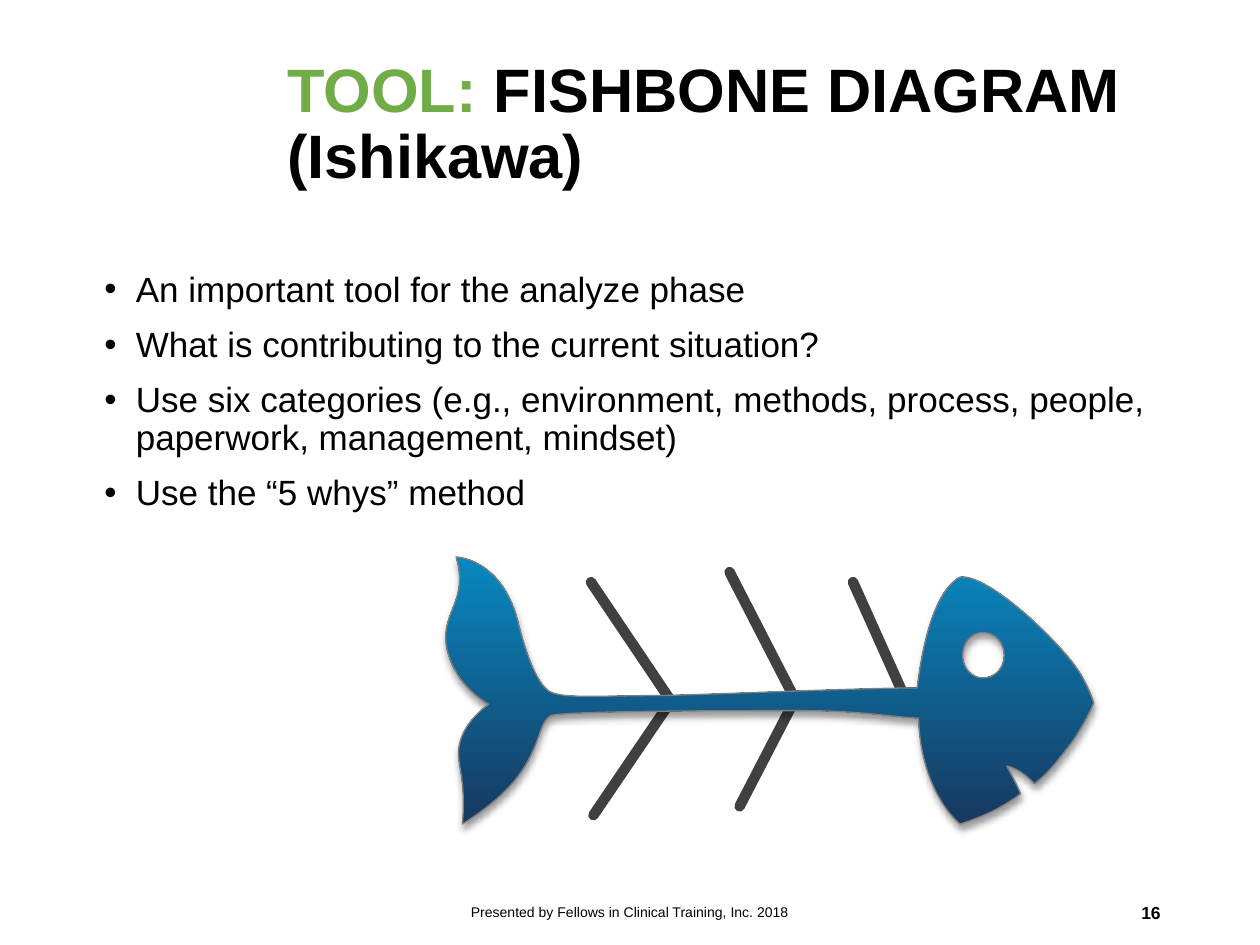
"""Build the fishbone diagram slide."""
import lxml.etree
import pptx
import pptx.dml.color
import pptx.enum.shapes
import pptx.enum.text
import pptx.oxml.ns
import pptx.util

Inches = pptx.util.Inches
Pt = pptx.util.Pt
qn = pptx.oxml.ns.qn
Align = pptx.enum.text.PP_ALIGN
Anchor = pptx.enum.text.MSO_ANCHOR

COLORS = {
    "text": "000000",
    "accent": "70AD47",
    "bone": "404040",
    "outline": "808080",
    "fish_bottom": "17385F",
    "fish_top": "0888C0",
}

POINTS = [
    "An important tool for the analyze phase",
    "What is contributing to the current situation?",
    "Use six categories (e.g., environment, methods, process, people, "
    "paperwork, management, mindset)",
    "Use the “5 whys” method",
]

BONES = [
    ((6.77, 4.62), (7.21, 5.6)),
    ((5.79, 4.54), (6.31, 5.55)),
    ((4.69, 4.62), (5.35, 5.6)),
    ((5.87, 6.4), (6.31, 5.55)),
    ((4.71, 6.47), (5.3, 5.6)),
]

EYE = [
    (7.8, 5.02), (7.71, 5.02), (7.64, 5.1), (7.64, 5.2),
    (7.64, 5.3), (7.71, 5.38), (7.8, 5.38),
    (7.9, 5.38), (7.97, 5.3), (7.97, 5.2),
    (7.97, 5.1), (7.9, 5.02), (7.8, 5.02),
]

BODY = [
    (3.62, 4.42), (3.62, 4.42), (4, 4.43), (4.12, 4.97),
    (4.19, 5.24), (4.27, 5.42), (4.35, 5.48),
    (4.44, 5.55), (4.75, 5.52), (5.24, 5.52),
    (5.72, 5.51), (6.82, 5.46), (7.28, 5.46),
    (7.35, 4.87), (7.5, 4.64), (7.62, 4.58),
    (7.83, 4.55), (8.37, 5.05), (8.55, 5.31),
    (8.65, 5.46), (8.68, 5.58), (8.68, 5.58),
    (8.68, 5.58), (8.62, 5.73), (8.5, 5.9),
    (8.42, 6), (8.34, 6.12), (8.21, 6.22),
    (8.09, 6.09), (7.99, 6.08), (7.99, 6.08),
    (7.99, 6.08), (8.08, 6.24), (8.1, 6.3),
    (7.97, 6.4), (7.81, 6.48), (7.62, 6.54),
    (7.62, 6.54), (7.31, 6.3), (7.29, 5.7),
    (7.07, 5.69), (6.84, 5.64), (6.35, 5.64),
    (5.87, 5.64), (4.47, 5.64), (4.37, 5.68),
    (4.28, 5.73), (4.29, 5.9), (4.14, 6.12),
    (3.99, 6.35), (3.67, 6.54), (3.67, 6.54),
    (3.7, 6.19), (3.63, 6.08), (3.64, 5.95),
    (3.66, 5.73), (3.88, 5.59), (3.88, 5.59),
    (3.88, 5.59), (3.59, 5.44), (3.54, 5.11),
    (3.51, 4.85), (3.72, 4.76), (3.62, 4.42),
]


def rgb(name):
    """Return the palette colour with this name."""
    return pptx.dml.color.RGBColor.from_string(COLORS[name])


class FishboneSlide:
    """Hold the style and the current slide."""

    font_name = "Arial"

    def __init__(self, deck):
        """Add a title-only slide to the deck."""
        self.slide = deck.slides.add_slide(deck.slide_layouts[5])

    def style(self, run, size, color="text", bold=False):
        """Format one run."""
        run.font.name = self.font_name
        run.font.size = Pt(size)
        run.font.bold = bold
        run.font.color.rgb = rgb(color)

    def title(self, box, parts):
        """Fill the title with (text, colour) parts."""
        heading = self.slide.shapes.title
        heading.left, heading.top, heading.width, heading.height = map(Inches, box)
        frame = heading.text_frame
        frame.word_wrap = True
        frame.auto_size = pptx.enum.text.MSO_AUTO_SIZE.NONE
        frame.vertical_anchor = Anchor.MIDDLE
        paragraph = frame.paragraphs[0]
        paragraph.alignment = Align.LEFT
        paragraph.line_spacing = 0.9
        for text, color in parts:
            run = paragraph.add_run()
            run.text = text
            self.style(run, 35, color, True)

    def text(self, box, text, size, align=Align.LEFT, anchor=Anchor.MIDDLE, bold=False):
        """Add a text box and return its frame."""
        frame = self.slide.shapes.add_textbox(*map(Inches, box)).text_frame
        frame.word_wrap = True
        frame.vertical_anchor = anchor
        frame.text = text
        for paragraph in frame.paragraphs:
            paragraph.alignment = align
            self.style(paragraph.runs[0], size, bold=bold)
        return frame

    def bullets(self, box, points):
        """Add a bulleted list."""
        frame = self.text(box, "\n".join(points), 20, anchor=Anchor.TOP)
        for index, paragraph in enumerate(frame.paragraphs):
            paragraph.line_spacing = 0.9
            paragraph.space_before = Pt(10 if index else 0)
            props = paragraph._p.get_or_add_pPr()
            props.set("marL", str(Inches(0.25)))
            props.set("indent", str(-Inches(0.25)))
            lxml.etree.SubElement(props, qn("a:buFont"), typeface=self.font_name)
            lxml.etree.SubElement(props, qn("a:buChar"), char="•")

    def bone(self, group, start, end):
        """Add one round-ended bone to the group."""
        bone = group.shapes.add_connector(
            pptx.enum.shapes.MSO_CONNECTOR.STRAIGHT, *map(Inches, start + end)
        )
        bone.line.color.rgb = rgb("bone")
        bone.line.width = Pt(6)
        properties = bone._element.spPr
        properties.find(qn("a:ln")).set("cap", "rnd")
        lxml.etree.SubElement(properties, qn("a:effectLst"))

    def curved(self, group, outlines):
        """Add a freeform whose outlines are chains of cubic curves."""
        chains = [[(Inches(x), Inches(y)) for x, y in chain] for chain in outlines]
        builder = group.shapes.build_freeform(*chains[0][0])
        for index, chain in enumerate(chains):
            if index:
                builder.move_to(*chain[0])
            builder.add_line_segments(chain[3::3], close=True)
        shape = builder.convert_to_shape()
        controls = [chain[i:i + 2] for chain in chains for i in range(1, len(chain), 3)]
        segments = list(shape._element.iter(qn("a:lnTo")))
        for segment, pair in zip(segments, controls):
            curve = lxml.etree.Element(qn("a:cubicBezTo"))
            for x, y in pair:
                lxml.etree.SubElement(
                    curve, qn("a:pt"), x=str(x - shape.left), y=str(y - shape.top)
                )
            curve.append(segment[0])
            segment.getparent().replace(segment, curve)
        return shape

    def fish(self, bones, eye, body):
        """Add the bones and the fish with its eye cut out."""
        group = self.slide.shapes.add_group_shape()
        for start, end in bones:
            self.bone(group, start, end)
        fish = self.curved(group, [eye, body])
        fish.fill.gradient()
        fish.fill.gradient_angle = 90
        for stop, color in zip(fish.fill.gradient_stops, ("fish_bottom", "fish_top")):
            stop.color.rgb = rgb(color)
        fish.line.color.rgb = rgb("outline")
        fish.line.width = Pt(0)
        fish.shadow.inherit = False
        shadow = lxml.etree.SubElement(
            fish._element.spPr.find(qn("a:effectLst")), qn("a:outerShdw"),
            blurRad=str(Pt(4)), dist=str(Pt(3)), dir="5400000", rotWithShape="0",
        )
        shade = lxml.etree.SubElement(shadow, qn("a:srgbClr"), val=COLORS["text"])
        lxml.etree.SubElement(shade, qn("a:alpha"), val="40000")


def main():
    """Build and save the slide."""
    deck = pptx.Presentation()
    deck.slide_width, deck.slide_height = Inches(10), Inches(7.5)
    page = FishboneSlide(deck)
    page.title((2.18, 0.27, 7.14, 1.45),
               [("TOOL:", "accent"), (" FISHBONE DIAGRAM (Ishikawa)", "text")])
    page.bullets((0.73, 2.11, 9.1, 3.7), POINTS)
    page.fish(BONES, EYE, BODY)
    page.text((3.31, 7.04, 3.38, 0.4),
              "Presented by Fellows in Clinical Training, Inc. 2018", 8, Align.CENTER)
    page.text((7.06, 7.04, 2.25, 0.4), "16", 10, Align.RIGHT, bold=True)
    deck.save("out.pptx")


if __name__ == "__main__":
    main()
